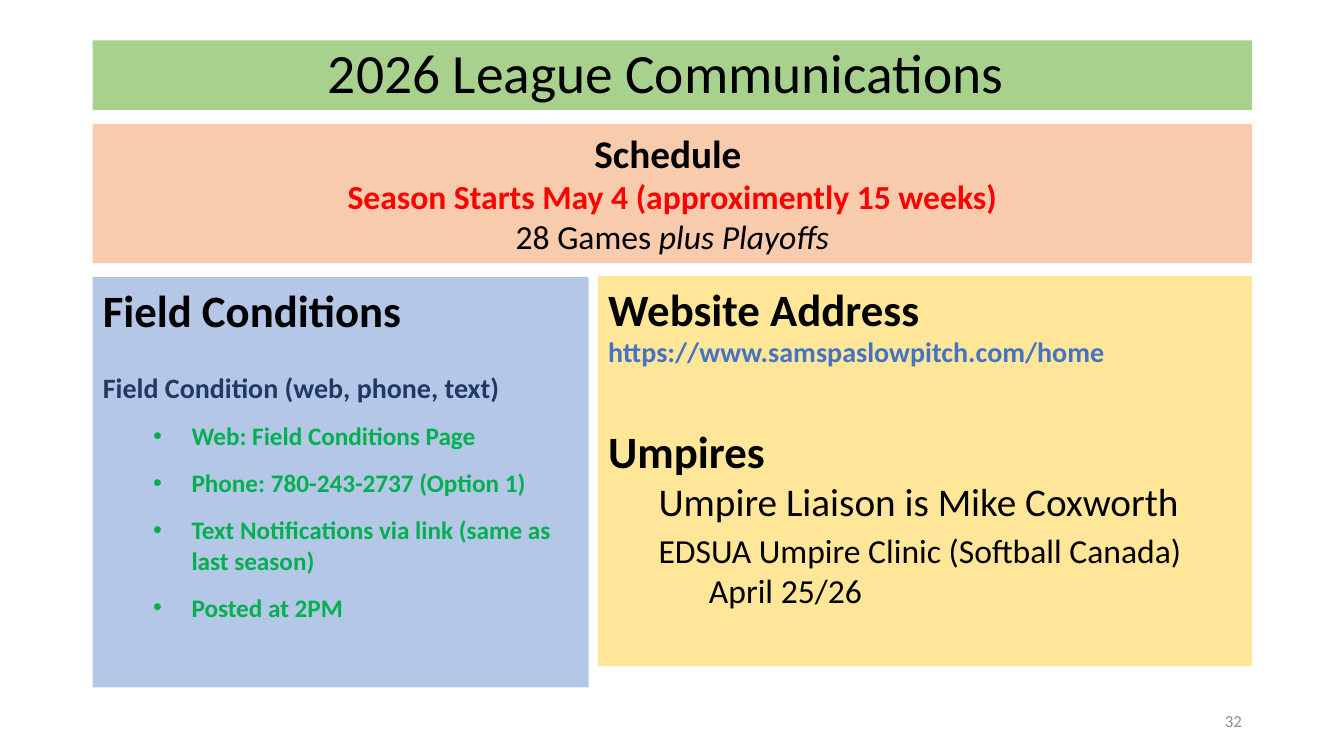
from dataclasses import dataclass

from lxml.etree import SubElement
from pptx import Presentation
from pptx.dml.color import RGBColor
from pptx.enum.shapes import MSO_SHAPE as Shape
from pptx.enum.text import MSO_ANCHOR as Anchor, MSO_AUTO_SIZE as AutoSize, PP_ALIGN as Align
from pptx.oxml.ns import qn
from pptx.util import Inches, Pt

WIDTH, HEIGHT = Inches(13.33), Inches(7.5)


@dataclass(frozen=True)
class Theme:
    """Colours, font and type sizes of the slide."""
    font: str = "Calibri"
    green: str = "A9D18E"
    peach: str = "F8CBAD"
    yellow: str = "FFE699"
    blue: str = "B4C7E7"
    text: str = "000000"
    alert: str = "FF0000"
    link: str = "4472C4"
    navy: str = "203864"
    bullet: str = "00B050"
    muted: str = "8C8C8C"
    title: float = 39.6
    heading: int = 32
    subheading: int = 28
    body: int = 24
    detail: int = 20
    item: int = 18
    number: int = 12


THEME = Theme()


@dataclass(frozen=True)
class Box:
    """A rectangle in percent of the slide's size."""
    left: float
    top: float
    width: float
    height: float

    def lengths(self):
        """Return left, top, width and height as slide lengths."""
        shares = (self.left, self.top, self.width, self.height)
        return [int(share / 100 * side) for share, side in zip(shares, (WIDTH, HEIGHT) * 2)]


def prepare(shape, box, fill=None, anchor=Anchor.TOP):
    """Place a shape in its box, fill it and return its text frame."""
    shape.left, shape.top, shape.width, shape.height = box.lengths()
    if fill:
        shape.fill.solid()
        shape.fill.fore_color.rgb = RGBColor.from_string(fill)
    frame = shape.text_frame
    frame.word_wrap = True
    frame.auto_size = AutoSize.NONE
    frame.vertical_anchor = anchor
    return frame


def write(frame, text, size, color=THEME.text, bold=False, align=Align.LEFT,
          before=0, after=0, indent=0, bullet=False):
    """Add a formatted paragraph to the frame, using its empty first one."""
    first = frame.paragraphs[0]
    paragraph = first if not first.runs else frame.add_paragraph()
    paragraph.add_run().text = text
    paragraph.alignment = align
    paragraph.space_before, paragraph.space_after = Pt(before), Pt(after)
    properties = paragraph._p.get_or_add_pPr()
    properties.set("marL", str(Inches(indent)))
    properties.set("indent", str(Inches(-0.38 if bullet else 0)))
    if bullet:
        SubElement(properties, qn("a:buFont"), typeface="Arial")
        SubElement(properties, qn("a:buChar"), char="•")
    else:
        SubElement(properties, qn("a:buNone"))
    font = paragraph.font
    font.name, font.size, font.bold = THEME.font, Pt(size), bold
    font.color.rgb = RGBColor.from_string(color)
    return paragraph


def add_title(slide, box):
    """Fill the title banner."""
    frame = prepare(slide.shapes.title, box, THEME.green, Anchor.MIDDLE)
    paragraph = write(frame, "2026 League Communications ", THEME.title, align=Align.CENTER)
    paragraph.line_spacing = 0.9


def add_schedule(slide, box):
    """Draw the schedule banner."""
    shape = slide.shapes.add_shape(Shape.RECTANGLE, *box.lengths())
    shape.shadow.inherit = False
    shape.line.fill.background()
    frame = prepare(shape, box, THEME.peach)
    write(frame, "Schedule ", THEME.subheading, bold=True, align=Align.CENTER)
    write(frame, "Season Starts May 4 (approximently 15 weeks)", THEME.body, THEME.alert,
          bold=True, align=Align.CENTER)
    games = write(frame, "28 Games ", THEME.body, align=Align.CENTER)
    playoffs = games.add_run()
    playoffs.text = "plus Playoffs"
    playoffs.font.italic = True


def add_field_conditions(slide, box):
    """Fill the left panel with the field condition channels."""
    frame = prepare(slide.placeholders[1], box, THEME.blue)
    write(frame, "Field Conditions", THEME.heading, bold=True)
    write(frame, "Field Condition (web, phone, text)", THEME.detail, THEME.navy,
          bold=True, before=24.4, after=12)
    for channel in ("Web: Field Conditions Page",
                    "Phone: 780-243-2737 (Option 1)",
                    "Text Notifications via link (same as last season)",
                    "Posted at 2PM"):
        write(frame, channel, THEME.item, THEME.bullet, bold=True, after=12,
              indent=0.88, bullet=True)


def add_contacts(slide, box):
    """Fill the right panel with the website and the umpire details."""
    frame = prepare(slide.placeholders[2], box, THEME.yellow)
    write(frame, "Website Address", THEME.heading, bold=True)
    write(frame, "https://www.samspaslowpitch.com/home", THEME.detail, THEME.link, bold=True)
    write(frame, "Umpires", THEME.heading, bold=True, before=39)
    write(frame, "Umpire Liaison is Mike Coxworth", THEME.subheading, indent=0.5)
    write(frame, "EDSUA Umpire Clinic (Softball Canada)", THEME.body, before=4, indent=0.5)
    write(frame, "April 25/26", THEME.body, indent=1)


def add_slide_number(slide, box):
    """Write the slide number."""
    shape = slide.shapes.add_textbox(*box.lengths())
    frame = prepare(shape, box, anchor=Anchor.MIDDLE)
    write(frame, "32", THEME.number, THEME.muted, align=Align.RIGHT)


def main():
    """Build and save the presentation."""
    presentation = Presentation()
    presentation.slide_width, presentation.slide_height = WIDTH, HEIGHT
    slide = presentation.slides.add_slide(presentation.slide_layouts[3])
    add_title(slide, Box(6.9, 5.33, 86.25, 9.2))
    add_schedule(slide, Box(6.9, 16.4, 86.25, 18.4))
    add_field_conditions(slide, Box(6.9, 36.67, 36.9, 54.27))
    add_contacts(slide, Box(44.5, 36.53, 48.65, 51.6))
    add_slide_number(slide, Box(70.65, 92.67, 22.5, 5.33))
    presentation.save("out.pptx")


if __name__ == "__main__":
    main()
